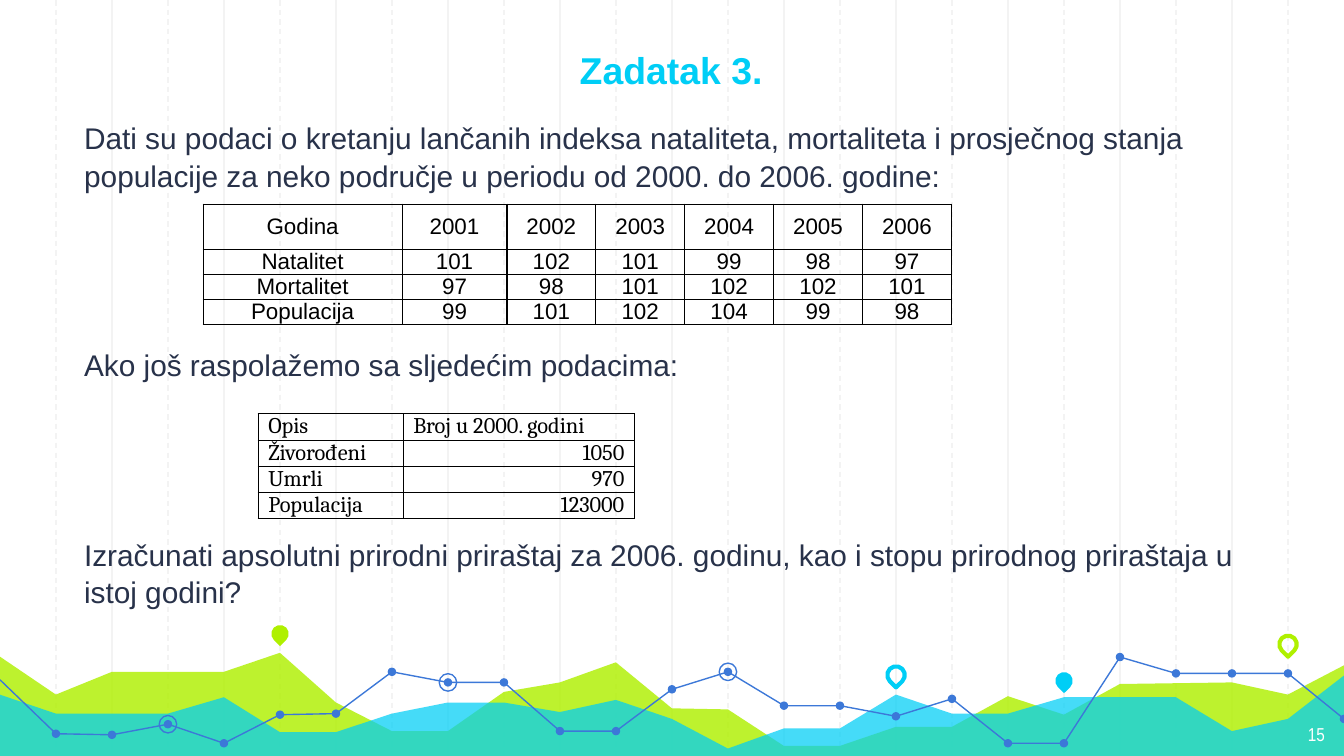
from dataclasses import dataclass
from itertools import product
from typing import Optional

from lxml.etree import SubElement
from pptx import Presentation
from pptx.dml.color import RGBColor
from pptx.enum.dml import MSO_LINE_DASH_STYLE as Dash
from pptx.enum.shapes import MSO_CONNECTOR as Connector, MSO_SHAPE as Shape
from pptx.enum.text import MSO_ANCHOR as Anchor, MSO_AUTO_SIZE as AutoSize, PP_ALIGN as Align
from pptx.oxml.ns import qn
from pptx.util import Cm, Pt

COLORS = {
    "green": "AFF000", "cyan": "00CEF6", "blue": "3C78D8", "grid": "F3F3F3",
    "text": "28324A", "black": "000000", "white": "FFFFFF",
}
WIDTH, HEIGHT, BLEED = 25.4, 14.29, 14.35
STEP = WIDTH / 24  # distance between grid lines
MARKER, DOT = 0.33, 0.16


@dataclass
class Area:
    color: str
    opacity: int
    heights: dict[int, float]  # grid line -> y


@dataclass
class Pin:
    column: int
    y: float
    color: str
    filled: bool


@dataclass
class Table:
    left: float
    top: float
    columns: list[float]
    rows: list[float]
    cells: list[list[str]]
    font: str
    anchor: Anchor
    aligns: tuple[Align, Align, Align]  # header row, first column, values


AREAS = [
    Area("green", 82, {
        0: 12.37, 1: 13.13, 2: 12.7, 4: 12.7, 5: 12.34, 6: 13.28, 7: 13.82, 8: 13.82,
        9: 13.08, 10: 12.9, 11: 12.52, 12: 13.39, 13: 13.41, 14: 14.1, 15: 14.1, 16: 13.74,
        17: 13.74, 18: 13.16, 19: 13.51, 20: 12.93, 22: 12.9, 23: 13.13, 24: 12.55}),
    Area("cyan", 73, {
        0: 13.11, 1: 13.49, 3: 13.49, 4: 13.18, 5: 13.84, 6: 13.84, 7: 13.49, 8: 13.28,
        9: 13.28, 10: 13.46, 11: 13.23, 12: 13.59, 13: 14.15, 14: 13.77, 15: 13.77, 16: 13.13,
        17: 13.49, 18: 13.49, 19: 13.18, 21: 13.18, 22: 13.82, 23: 13.59, 24: 12.73}),
]
TREND = [12.85, 13.87, 13.89, 13.69, 14.05, 13.51, 13.49, 12.7, 12.9, 12.9, 13.82, 13.82,
         13.03, 12.7, 13.34, 13.34, 13.54, 13.21, 14.05, 14.05, 12.42, 12.73, 12.73, 12.73, 13.59]
TREND_PARTS = [(0, 11), (11, 20), (20, 24)]
RINGS = [3, 8, 13]
PINS = [Pin(5, 11.98, "green", True), Pin(16, 12.76, "cyan", False),
        Pin(19, 12.87, "cyan", True), Pin(23, 12.18, "green", False)]

TABLES = [
    Table(4.88, 7.82, [2.74, 4.37], [0.51] + [0.49] * 3, [
        ["Opis", "Broj u 2000. godini"],
        ["Živorođeni", "1050"],
        ["Umrli", "970"],
        ["Populacija", "123000"],
    ], "Cambria", Anchor.TOP, (Align.LEFT, Align.LEFT, Align.RIGHT)),
    Table(3.84, 3.86, [3.76, 1.98] + [1.68] * 5, [0.85] + [0.47] * 3, [
        ["Godina", "2001", "2002", "2003", "2004", "2005", "2006"],
        ["Natalitet", "101", "102", "101", "99", "98", "97"],
        ["Mortalitet", "97", "98", "101", "102", "102", "101"],
        ["Populacija", "99", "101", "102", "104", "99", "98"],
    ], "Arial", Anchor.MIDDLE, (Align.CENTER,) * 3),
]
TASK = [
    "Dati su podaci o kretanju lančanih indeksa nataliteta, mortaliteta i prosječnog stanja "
    "populacije za neko područje u periodu od 2000. do 2006. godine:",
    "Ako još raspolažemo sa sljedećim podacima:",
    "Izračunati apsolutni prirodni priraštaj za 2006. godinu, kao i stopu prirodnog priraštaja u "
    "istoj godini?",
]
TABLE_GAP = 81.4  # points left between the paragraphs for a table


def rgb(name: str) -> RGBColor:
    return RGBColor.from_string(COLORS[name])


def set_attrs(obj, values: dict) -> None:
    for name, value in values.items():
        setattr(obj, name, value)


def style_shape(sp, fill: Optional[str] = None, line: Optional[str] = None,
                width: float = 0.75) -> None:
    sp.shadow.inherit = False
    for part, color in ((sp.fill, fill), (sp.line.fill, line)):
        if color:
            part.solid()
            part.fore_color.rgb = rgb(color)
        else:
            part.background()
    if line:
        sp.line.width = Pt(width)


def draw_outline(s, points: list[tuple[float, float]], closed: bool):
    """Draw a freeform through (grid column, y) points."""
    xy = [(Cm(column * STEP), Cm(y)) for column, y in points]
    builder = s.shapes.build_freeform(*xy[0])
    builder.add_line_segments(xy[1:], close=closed)
    return builder.convert_to_shape()


def draw_marker(s, kind: Shape, column: int, y: float, size: float):
    """Draw a shape centred on a grid column."""
    return s.shapes.add_shape(kind, Cm(column * STEP - size / 2), Cm(y - size / 2),
                              Cm(size), Cm(size))


def draw_grid(s) -> None:
    for column in range(1, 24):
        x = Cm(column * STEP)
        line = s.shapes.add_connector(Connector.STRAIGHT, x, 0, x, Cm(BLEED))
        line.line.color.rgb = rgb("grid")
        line.line.width = Pt(0.75)
        if column % 2:
            line.line.dash_style = Dash.DASH
        SubElement(line.element.spPr, qn("a:effectLst"))


def draw_area(s, area: Area) -> None:
    first, *middle, last = area.heights.items()
    left, right = -0.06, 24.05
    points = [(left, first[1]), *middle, (right, last[1]), (right, BLEED), (left, BLEED)]
    sp = draw_outline(s, points, True)
    style_shape(sp, fill=area.color)
    color = sp.element.spPr.find(".//" + qn("a:srgbClr"))
    SubElement(color, qn("a:alpha"), val=str(area.opacity * 1000))


def draw_pin(s, pin: Pin) -> None:
    sp = draw_marker(s, Shape.TEAR, pin.column, pin.y, MARKER)
    sp.adjustments[0] = 1
    sp.rotation = 135
    style_shape(sp, **({"fill": pin.color} if pin.filled else {"line": pin.color, "width": 2.25}))


def draw_trend(s) -> None:
    for start, end in TREND_PARTS:
        points = list(enumerate(TREND))[start:end + 1]
        style_shape(draw_outline(s, points, False), line="blue")
    for column, y in list(enumerate(TREND))[1:]:
        style_shape(draw_marker(s, Shape.OVAL, column, y, DOT), fill="blue")
    for column in RINGS:
        style_shape(draw_marker(s, Shape.OVAL, column, TREND[column], MARKER), line="blue")


def write(p, text: str, font: str, size: float, color: str, **values) -> None:
    r = p.add_run()
    r.text = text
    set_attrs(r.font, {"name": font, "size": Pt(size), **values})
    r.font.color.rgb = rgb(color)


def place_text(sp, box: tuple[float, float, float, float], anchor: Anchor):
    """Set position and frame of a text shape and return its text frame."""
    set_attrs(sp, dict(zip(("left", "top", "width", "height"), map(Cm, box))))
    tf = sp.text_frame
    margins = dict.fromkeys(("margin_left", "margin_top", "margin_right", "margin_bottom"), Cm(0.25))
    set_attrs(tf, {"word_wrap": True, "auto_size": AutoSize.NONE, "vertical_anchor": anchor, **margins})
    return tf


def border_cell(cell) -> None:
    tcPr = cell._tc.get_or_add_tcPr()
    for i, side in enumerate(("lnL", "lnR", "lnT", "lnB")):
        ln = SubElement(tcPr, qn(f"a:{side}"), w=str(Pt(0.75)))
        SubElement(SubElement(ln, qn("a:solidFill")), qn("a:srgbClr"), val=COLORS["black"])
        tcPr.insert(i, ln)


def draw_table(s, spec: Table) -> None:
    table = s.shapes.add_table(len(spec.rows), len(spec.columns), Cm(spec.left), Cm(spec.top),
                               Cm(sum(spec.columns)), Cm(sum(spec.rows))).table
    set_attrs(table, {"first_row": False, "horz_banding": False})
    for column, width in zip(table.columns, spec.columns):
        column.width = Cm(width)
    for row, height in zip(table.rows, spec.rows):
        row.height = Cm(height)
    header, label, value = spec.aligns
    for i, j in product(range(len(spec.rows)), range(len(spec.columns))):
        cell = table.cell(i, j)
        set_attrs(cell, {"margin_left": Cm(0.19), "margin_right": Cm(0.19), "margin_top": 0,
                         "margin_bottom": 0, "vertical_anchor": spec.anchor})
        cell.fill.background()
        border_cell(cell)
        p = cell.text_frame.paragraphs[0]
        p.alignment = header if i == 0 else label if j == 0 else value
        write(p, spec.cells[i][j], spec.font, 12, "black")


def write_task(tf) -> None:
    for i, text in enumerate(TASK):
        p = tf.add_paragraph() if i else tf.paragraphs[0]
        pPr = p._p.get_or_add_pPr()
        pPr.set("marL", str(Cm(0.3)))
        pPr.set("indent", "0")
        SubElement(pPr, qn("a:buNone"))
        set_attrs(p, {"alignment": Align.LEFT, "line_spacing": 1.05,
                      "space_before": Pt(TABLE_GAP if i else 0), "space_after": Pt(0)})
        write(p, text, "Arial", 16, "text")


def main() -> None:
    prs = Presentation()
    set_attrs(prs, {"slide_width": Cm(WIDTH), "slide_height": Cm(HEIGHT)})
    s = prs.slides.add_slide(prs.slide_layouts[1])
    title, body = s.placeholders

    draw_grid(s)
    for area in AREAS:
        draw_area(s, area)
    draw_trend(s)
    for pin in PINS:
        draw_pin(s, pin)

    for placeholder in (title, body):  # bring in front of the background
        s.shapes.element.append(placeholder.element)
    p = place_text(title, (2.97, 0, 19.43, 1.98), Anchor.BOTTOM).paragraphs[0]
    p.alignment = Align.CENTER
    write(p, "Zadatak 3.", "Arial", 20, "cyan", bold=True)
    write_task(place_text(body, (1.04, 1.98, 23.5, 9.6), Anchor.TOP))

    number = s.shapes.add_textbox(0, 0, 0, 0)
    p = place_text(number, (23.77, 13.41, 1.52, 0.89), Anchor.TOP).paragraphs[0]
    p.alignment = Align.RIGHT
    write(p, "15", "Arial Narrow", 10, "white")

    for table in TABLES:
        draw_table(s, table)
    prs.save("out.pptx")


if __name__ == "__main__":
    main()
